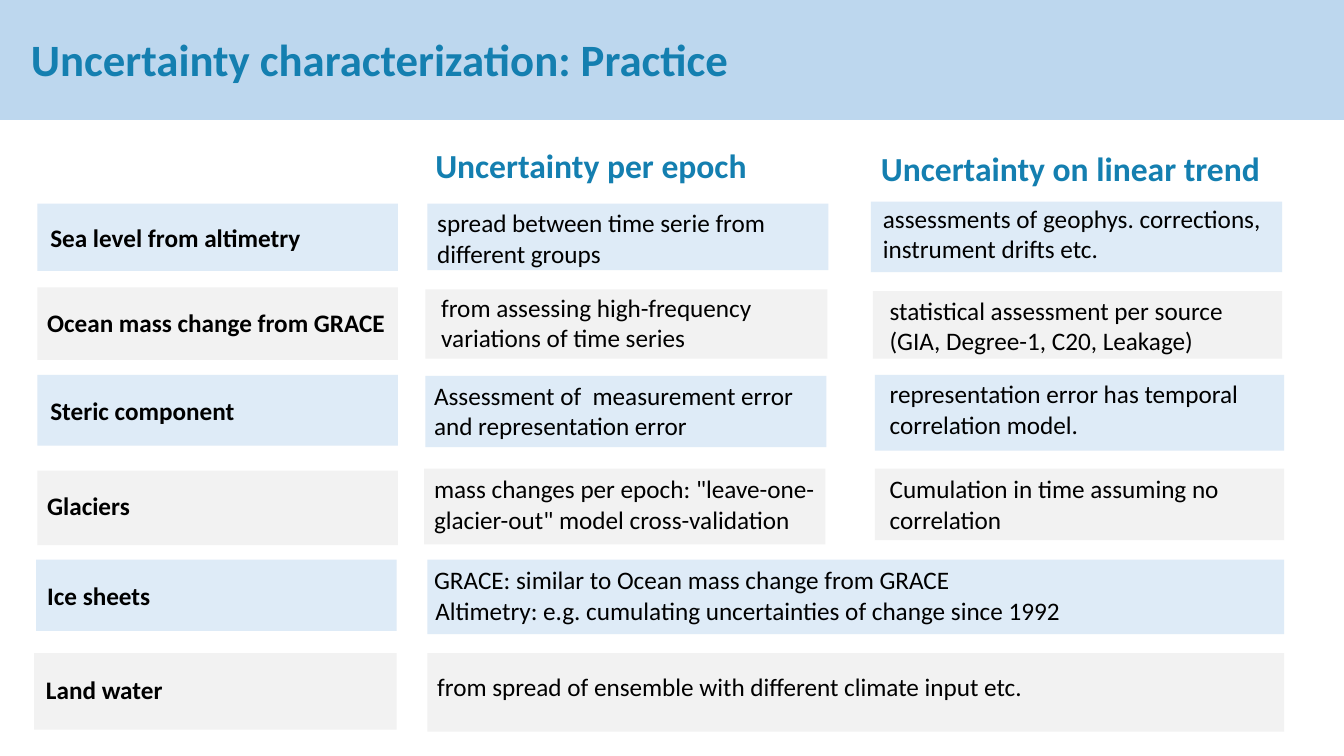
from pptx import Presentation
from pptx.dml.color import RGBColor as RGB
from pptx.enum.shapes import MSO_SHAPE as SHAPE
from pptx.enum.text import MSO_ANCHOR as ANCHOR
from pptx.util import Cm, Pt

SKY = RGB(0xBD, 0xD7, 0xEE)
PALE = RGB(0xDE, 0xEB, 0xF7)
GREY = RGB(0xF2, 0xF2, 0xF2)
TEAL = RGB(0x14, 0x7F, 0xB0)
BLACK = RGB(0, 0, 0)

deck = Presentation()
deck.slide_width, deck.slide_height = Cm(33.87), Cm(19.05)
slide = deck.slides.add_slide(deck.slide_layouts[6])


def add_box(spot, fill):
    box = slide.shapes.add_shape(SHAPE.RECTANGLE, *map(Cm, spot))
    box.shadow.inherit = False
    box.fill.solid()
    box.fill.fore_color.rgb = fill
    box.line.fill.background()


def add_text(spot, text, style, color, wrap):
    frame = slide.shapes.add_textbox(*map(Cm, spot)).text_frame
    frame.word_wrap = wrap
    frame.text = text
    for para in frame.paragraphs:
        for key, value in style.items():
            setattr(para.font, key, value)
        para.font.color.rgb = color
    return frame


add_box((0, -0.03, 33.87, 3.05), SKY)

rows = [
    [(0.94, 5.13, 9.09, 1.7), (10.77, 5.13, 10.11, 1.68), (21.95, 5.08, 10.36, 1.78)],
    [(0.94, 7.24, 9.09, 1.83), (10.72, 7.29, 10.13, 1.75), (22, 7.34, 10.31, 1.7)],
    [(0.94, 9.45, 9.09, 1.78), (10.72, 9.47, 10.11, 1.8), (22.05, 9.45, 10.31, 1.91)],
    [(0.94, 11.86, 9.09, 1.88), (10.69, 11.81, 10.11, 1.91), (22.05, 11.81, 10.31, 1.8)],
    [(0.91, 14.1, 9.09, 1.8), (10.77, 14.1, 21.59, 1.88)],
    [(0.86, 16.46, 9.14, 1.93), (10.77, 16.46, 21.59, 1.98)],
]
for index, row in enumerate(rows):
    for spot in row:
        add_box(spot, GREY if index % 2 else PALE)

title = {"name": "Calibri", "size": Pt(32), "bold": True}
head = title | {"size": Pt(24)}
label = title | {"size": Pt(18)}
body = label | {"bold": False}

frame = add_text((0.53, -0.28, 21.64, 3.68),
                 "Uncertainty characterization: Practice", title, TEAL, True)
frame.vertical_anchor = ANCHOR.MIDDLE
frame.paragraphs[0].line_spacing = 0.9

heads = [
    (10.72, 3.53, 9.3, "Uncertainty per epoch"),
    (21.95, 3.61, 11.23, "Uncertainty on linear trend"),
]
wide_labels = [
    (1.02, 5.49, 7.9, "Sea level from altimetry"),
]
labels = [
    (0.94, 7.62, 9.09, "Ocean mass change from GRACE"),
    (1.02, 9.83, 5.18, "Steric component"),
    (0.94, 12.22, 2.62, "Glaciers"),
    (0.94, 14.5, 3.12, "Ice sheets"),
    (0.91, 16.87, 3.48, "Land water"),
]
notes = [
    (10.77, 5.11, 9.27, "spread between time serie from different groups"),
    (22, 5, 10.49, "assessments of geophys. corrections, instrument drifts etc."),
    (10.87, 7.24, 9.55, "from assessing high-frequency variations of time series"),
    (22.17, 7.32, 10.8, "statistical assessment per source\n(GIA, Degree-1, C20, Leakage)"),
    (10.69, 9.45, 10.03, "Assessment of  measurement error and representation error"),
    (22.17, 9.42, 10.19, "representation error has temporal correlation model."),
    (10.69, 11.81, 10.19,
     'mass changes per epoch: "leave-one-glacier-out" model cross-validation'),
    (22.17, 11.81, 9.83, "Cumulation in time assuming no correlation"),
]
lines = [
    (10.69, 14.1, 13.64, "GRACE: similar to Ocean mass change from GRACE"),
    (10.72, 14.88, 16.26, "Altimetry: e.g. cumulating uncertainties of change since 1992"),
    (10.77, 16.79, 15.6, "from spread of ensemble with different climate input etc."),
]
groups = [
    (heads, 1.27, head, TEAL, True),
    (wide_labels, 1.02, label, BLACK, True),
    (labels, 1.02, label, BLACK, False),
    (notes, 1.8, body, BLACK, True),
    (lines, 1.02, body, BLACK, False),
]
for items, high, style, color, wrap in groups:
    for left, top, wide, text in items:
        add_text((left, top, wide, high), text, style, color, wrap)

deck.save("out.pptx")
